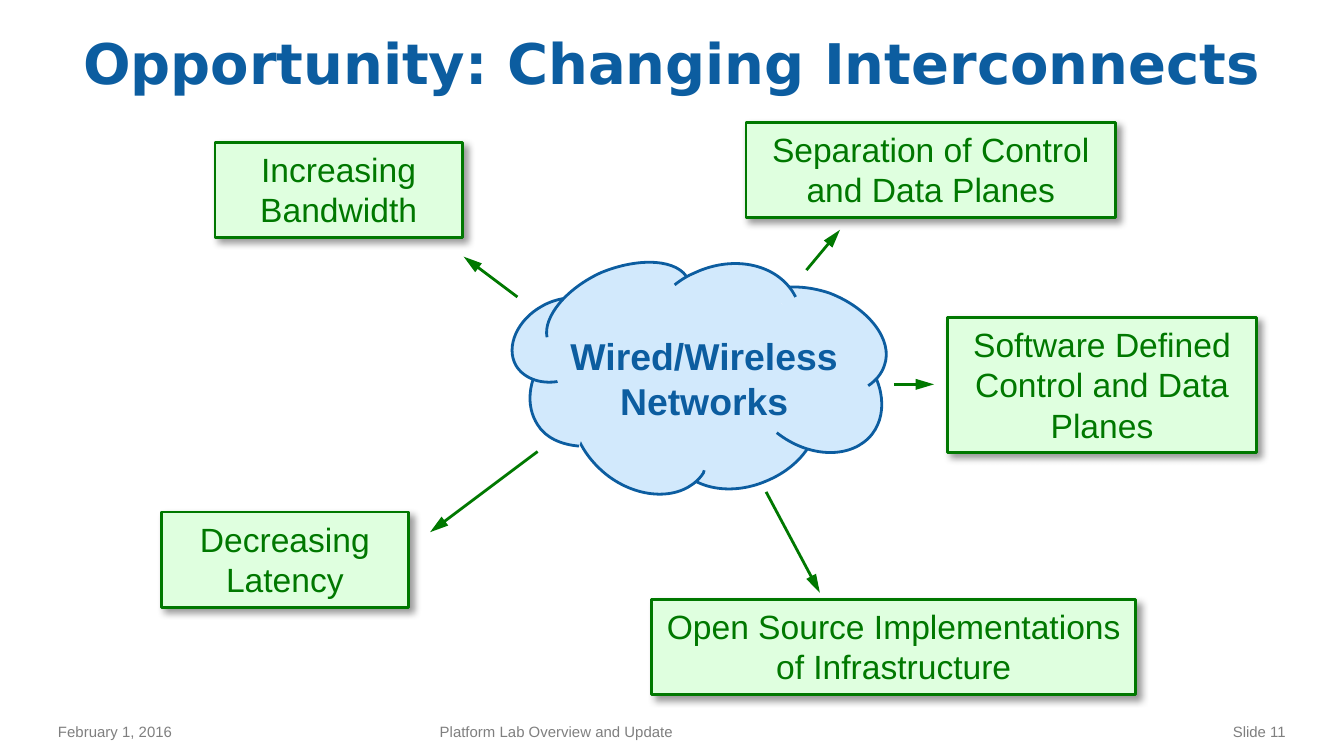
from copy import deepcopy

from lxml.etree import SubElement
from pptx import Presentation
from pptx.dml.color import RGBColor
from pptx.enum.shapes import MSO_CONNECTOR, MSO_SHAPE
from pptx.enum.text import MSO_ANCHOR, MSO_AUTO_SIZE, PP_ALIGN
from pptx.oxml import parse_xml
from pptx.oxml.ns import nsdecls, qn
from pptx.util import Pt

BLUE = RGBColor(0x0C, 0x5D, 0xA0)
SKY = RGBColor(0xD2, 0xE9, 0xFC)
GREEN = RGBColor(0x00, 0x78, 0x00)
MINT = RGBColor(0xDF, 0xFF, 0xDF)
GRAY = RGBColor(0x7F, 0x7F, 0x7F)

TITLE = {"name": "DejaVu Sans", "size": Pt(30), "bold": True}
FOOT = {"name": "Arial", "size": Pt(8), "bold": False}
HUB = {"name": "Arial", "size": Pt(20), "bold": True}
CARD = {"name": "Arial", "size": Pt(18), "bold": False}
FIXED = {"word_wrap": True, "auto_size": MSO_AUTO_SIZE.NONE,
         "vertical_anchor": MSO_ANCHOR.MIDDLE}
GROW = {"word_wrap": True, "auto_size": MSO_AUTO_SIZE.SHAPE_TO_FIT_TEXT,
        "vertical_anchor": MSO_ANCHOR.TOP}
LOOSE = {**GROW, "word_wrap": False}

UNIT = 0.72
BACK = [
    [(121, 146), (131, 168), (162, 175), (190, 163), (217, 152), (233, 128),
     (227, 107), (174, 124)],
    [(198, 127), (222, 146), (254, 147), (269, 128), (282, 111), (277, 84),
     (256, 64), (224, 93)],
    [(46, 112), (46, 128), (55, 145), (71, 158), (95, 177), (127, 178),
     (142, 159), (143, 158), (144, 156), (144, 155), (97, 124)],
    [(25, 71), (13, 88), (11, 107), (20, 121), (26, 131), (38, 136),
     (51, 137), (67, 89)],
    [(40, 27), (34, 28), (28, 30), (23, 33), (5, 43), (-4, 63), (4, 77),
     (10, 87), (24, 92), (39, 88), (37, 58)],
    [(266, 92), (272, 88), (276, 83), (278, 77), (285, 58), (266, 34),
     (237, 23), (222, 18), (206, 17), (193, 21), (225, 58)],
    [(132, 13), (125, -2), (96, -4), (67, 8), (41, 20), (24, 41), (27, 56),
     (80, 37)],
]
CORE = [(48, 124), (53, 126), (124, 145), (241, 106), (263, 62), (197, 29),
        (106, 15), (37, 40), (29, 73)]
FRONT = [(212, 26), (200, 2), (167, -6), (137, 8), (132, 10), (127, 13),
         (122, 17), (158, 51)]

CARDS = [
    ("Increasing\vBandwidth", (115.2, 76.32, 132.48, 51.12)),
    ("Decreasing\vLatency", (86.4, 274.32, 132.48, 51.12)),
    ("Separation of Control and Data Planes", (399.6, 65.52, 198, 51.12)),
    ("Software Defined Control and Data Planes", (507.6, 169.92, 165.6, 72.72)),
    ("Open Source Implementations of Infrastructure",
     (349.2, 321.12, 259.2, 51.12)),
]
ARROWS = [
    (277.2, 159.12, 248.4, 137.52),
    (288, 241.92, 230.4, 285.12),
    (432, 144.72, 450, 123.12),
    (410.4, 263.52, 439.2, 317.52),
    (478.8, 205.92, 500.4, 205.92),
]


def write(shape, text, font, color, align, frame):
    """Fill a shape with one formatted paragraph."""
    body = shape.text_frame
    body.text = text
    for key, value in frame.items():
        setattr(body, key, value)
    para = body.paragraphs[0]
    para.alignment = align
    for run in para.runs:
        for key, value in font.items():
            setattr(run.font, key, value)
        run.font.color.rgb = color


def paint(shape, fill, line=None):
    """Set a flat fill and an optional outline."""
    shape.shadow.inherit = False
    shape.fill.solid()
    shape.fill.fore_color.rgb = fill
    if line is None:
        shape.line.fill.background()
    else:
        shape.line.color.rgb = line
        shape.line.width = Pt(1.5)


def add_title(slide, text, box):
    """Place the slide title in the box."""
    title = slide.shapes.title
    title.left, title.top, title.width, title.height = map(Pt, box)
    write(title, text, TITLE, BLUE, PP_ALIGN.CENTER, FIXED)


def add_foot(slide, box):
    """Place date, talk name and slide number along the box."""
    left, top, width, height = box
    parts = [
        ("February 1, 2016", 0, 180, PP_ALIGN.LEFT),
        ("Platform Lab Overview and Update", 204.48, 270, PP_ALIGN.LEFT),
        ("Slide 11", width - 180, 180, PP_ALIGN.RIGHT),
    ]
    for text, shift, wide, align in parts:
        note = slide.shapes.add_textbox(
            Pt(left + shift), Pt(top), Pt(wide), Pt(height))
        write(note, text, FOOT, GRAY, align, FIXED)


def add_patch(group, points, left, top):
    """Add a closed outline on the cloud grid."""
    build = group.shapes.build_freeform(*points[0], scale=Pt(UNIT))
    build.add_line_segments(points[1:], close=True)
    return build.convert_to_shape(Pt(left), Pt(top))


def add_lobe(group, points, left, top):
    """Add a curved lobe whose last point is an unstroked inner corner."""
    lobe = add_patch(group, points, left, top)
    paint(lobe, SKY, BLUE)
    area = lobe.element.find(".//" + qn("a:path"))
    steps = area.findall(qn("a:lnTo"))[:-1]
    for first, *rest in zip(steps[::3], steps[1::3], steps[2::3]):
        first.tag = qn("a:cubicBezTo")
        for step in rest:
            first.append(step[0])
            area.remove(step)
    edge = deepcopy(area)
    for node in edge[-2:]:
        edge.remove(node)
    edge.set("fill", "none")
    area.set("stroke", "0")
    area.addprevious(edge)


def add_cloud(slide, text, box):
    """Draw the labelled network cloud in the box."""
    left, top, width, height = box
    group = slide.shapes.add_group_shape()
    for points in BACK:
        add_lobe(group, points, left, top)
    paint(add_patch(group, CORE, left, top), SKY)
    add_lobe(group, FRONT, left, top)
    label = group.shapes.add_textbox(
        Pt(left + 24.48), Pt(top + 34.56), Pt(width - 46.8), Pt(height - 72.72))
    write(label, text, HUB, BLUE, PP_ALIGN.CENTER, LOOSE)


def add_card(slide, text, box):
    """Add a green card with a soft shadow."""
    card = slide.shapes.add_shape(MSO_SHAPE.RECTANGLE, *map(Pt, box))
    paint(card, MINT, GREEN)
    glow = card.element.spPr.find(qn("a:effectLst"))
    glow.append(parse_xml(
        f'<a:outerShdw {nsdecls("a")} blurRad="{Pt(4)}" dist="{Pt(3)}" '
        'dir="2700000" algn="tl" rotWithShape="0"><a:srgbClr val="000000">'
        '<a:alpha val="40000"/></a:srgbClr></a:outerShdw>'))
    write(card, text, CARD, GREEN, PP_ALIGN.CENTER, GROW)


def add_arrow(slide, ends):
    """Draw an arrow from the cloud towards a card."""
    arrow = slide.shapes.add_connector(MSO_CONNECTOR.STRAIGHT, *map(Pt, ends))
    arrow.line.color.rgb = GREEN
    arrow.line.width = Pt(1.5)
    props = arrow.element.spPr
    SubElement(props.find(qn("a:ln")), qn("a:tailEnd"),
               type="triangle", w="med", len="lg")
    SubElement(props, qn("a:effectLst"))


def main():
    """Build and save the slide."""
    deck = Presentation()
    deck.slide_width, deck.slide_height = Pt(720), Pt(405)
    slide = deck.slides.add_slide(deck.slide_layouts[5])
    add_title(slide, "Opportunity: Changing Interconnects",
              (24, 11.52, 672, 43.2))
    add_foot(slide, (24, 383.04, 672, 17.28))
    add_cloud(slide, "Wired/Wireless\vNetworks", (273.6, 140.4, 205.2, 128.16))
    for text, box in CARDS:
        add_card(slide, text, box)
    for ends in ARROWS:
        add_arrow(slide, ends)
    deck.save("out.pptx")


if __name__ == "__main__":
    main()
